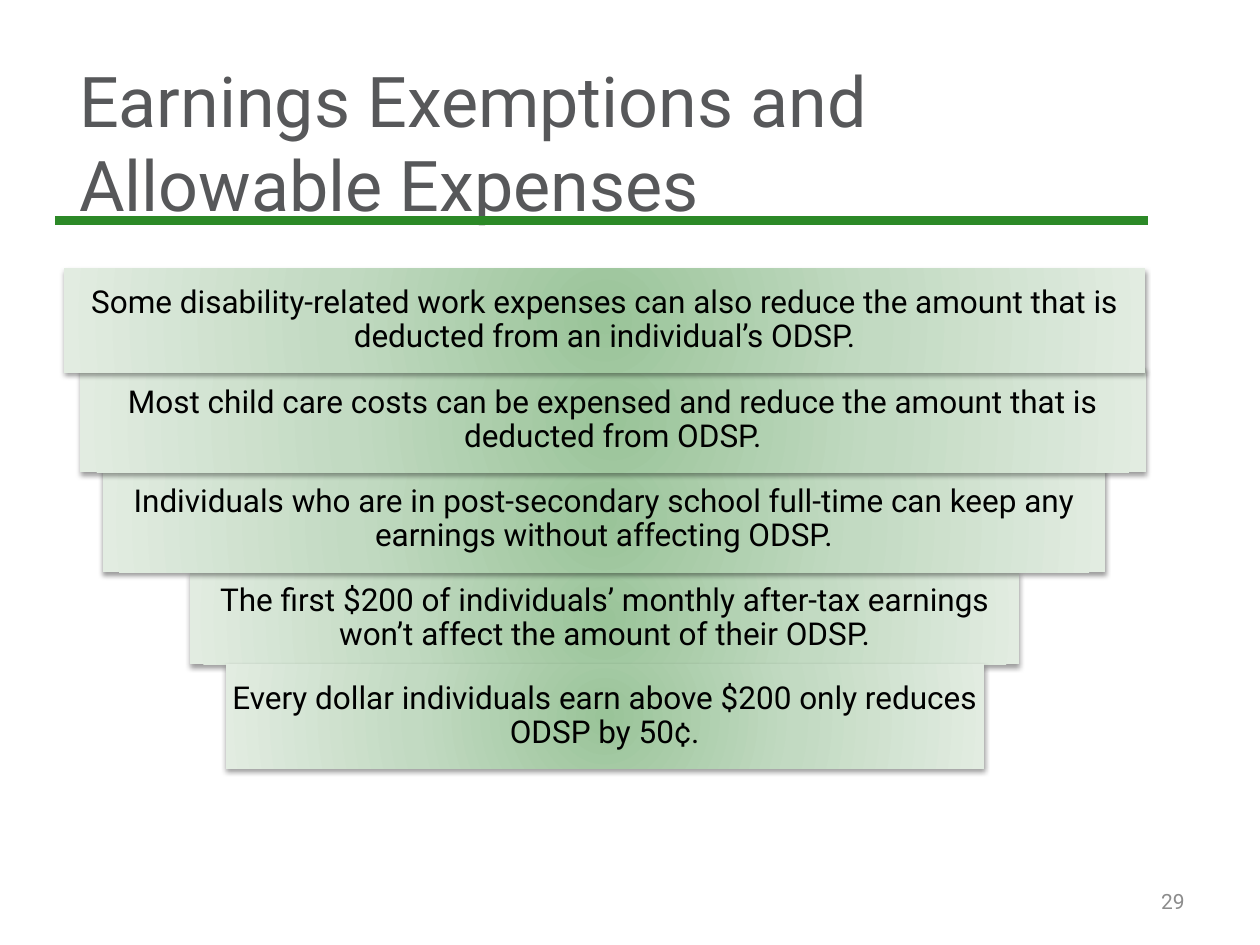
import pptx
import pptx.util
import pptx.dml.color
import pptx.enum.shapes
import pptx.enum.text
import pptx.oxml
import pptx.oxml.ns

Pt = pptx.util.Pt
RGB = pptx.dml.color.RGBColor.from_string
ALIGN = pptx.enum.text.PP_ALIGN
MIDDLE = pptx.enum.text.MSO_ANCHOR.MIDDLE
SHAPE = pptx.enum.shapes.MSO_SHAPE
LINE = pptx.enum.shapes.MSO_CONNECTOR.STRAIGHT
qn = pptx.oxml.ns.qn
NS = pptx.oxml.ns.nsdecls("a")

COLORS = {
    "title": "57585A", "page": "8C8C8C", "text": "000000", "rule": "2C8927",
    "core": "9AC499", "mid": "C2DAC2", "edge": "E2ECE1", "shade": "000000",
}

GLOW = f"""<a:gradFill {NS} rotWithShape="1"><a:gsLst>
<a:gs pos="0"><a:srgbClr val="{COLORS['core']}"/></a:gs>
<a:gs pos="50000"><a:srgbClr val="{COLORS['mid']}"/></a:gs>
<a:gs pos="100000"><a:srgbClr val="{COLORS['edge']}"/></a:gs></a:gsLst>
<a:path path="circle"><a:fillToRect l="50000" t="50000" r="50000" b="50000"/></a:path>
</a:gradFill>"""

SHADE = f"""<a:outerShdw {NS} blurRad="{Pt(3.1)}" dist="{Pt(1.6)}" dir="5400000" rotWithShape="0">
<a:srgbClr val="{COLORS['shade']}"><a:alpha val="38000"/></a:srgbClr></a:outerShdw>"""


def write(shape, text, size, color, align):
    frame = shape.text_frame
    frame.word_wrap = True
    frame.vertical_anchor = MIDDLE
    frame.text = text
    par = frame.paragraphs[0]
    par.alignment = align
    font = par.runs[0].font
    font.name = "Roboto"
    font.size = Pt(size)
    font.color.rgb = RGB(COLORS[color])
    return frame


deck = pptx.Presentation()
deck.slide_width, deck.slide_height = Pt(720), Pt(540)
slide = deck.slides.add_slide(deck.slide_layouts[6])
shapes = slide.shapes

# Title and page number
title = shapes.add_textbox(Pt(38.2), Pt(36), Pt(640), Pt(90))
write(title, "Earnings Exemptions and Allowable Expenses", 40, "title", ALIGN.LEFT)
page = shapes.add_textbox(Pt(516), Pt(500.5), Pt(168), Pt(28.8))
write(page, "29", 12, "page", ALIGN.RIGHT)

# Funnel bars, back to front: left, top, width, height, text
bars = [
    (108.7, 326.9, 473.8, 52.6, "The first $200 of individuals’ monthly after-tax "
     "earnings won’t affect the amount of their ODSP."),
    (128.9, 379.5, 433.4, 59.8, "Every dollar individuals earn above $200 only "
     "reduces ODSP by 50¢."),
    (59, 267.1, 572.4, 59.8, "Individuals who are in post-secondary school "
     "full-time can keep any earnings without affecting ODSP."),
    (45.7, 210.2, 609.1, 59.8, "Most child care costs can be expensed and reduce "
     "the amount that is deducted from ODSP."),
    (36.7, 153.3, 617.8, 59.8, "Some disability-related work expenses can also "
     "reduce the amount that is deducted from an individual’s ODSP."),
]
for left, top, width, height, text in bars:
    bar = shapes.add_shape(SHAPE.RECTANGLE, Pt(left), Pt(top), Pt(width), Pt(height))
    bar.line.fill.background()
    bar.fill.background()
    bar.shadow.inherit = False
    props = bar.fill._xPr
    props.replace(props.find(qn("a:noFill")), pptx.oxml.parse_xml(GLOW))
    props.find(qn("a:effectLst")).append(pptx.oxml.parse_xml(SHADE))
    frame = write(bar, text, 18, "text", ALIGN.CENTER)
    frame.margin_left = frame.margin_right = Pt(3.6)
    frame.margin_top = frame.margin_bottom = Pt(3.6)
    frame.paragraphs[0].line_spacing = 0.9

# Rule under the title
rule = shapes.add_connector(LINE, Pt(31.7), Pt(126), Pt(655.9), Pt(126))
rule.line.color.rgb = RGB(COLORS["rule"])
rule.line.width = Pt(5)
rule._element.spPr.append(pptx.oxml.parse_xml(f"<a:effectLst {NS}/>"))

deck.save("out.pptx")
